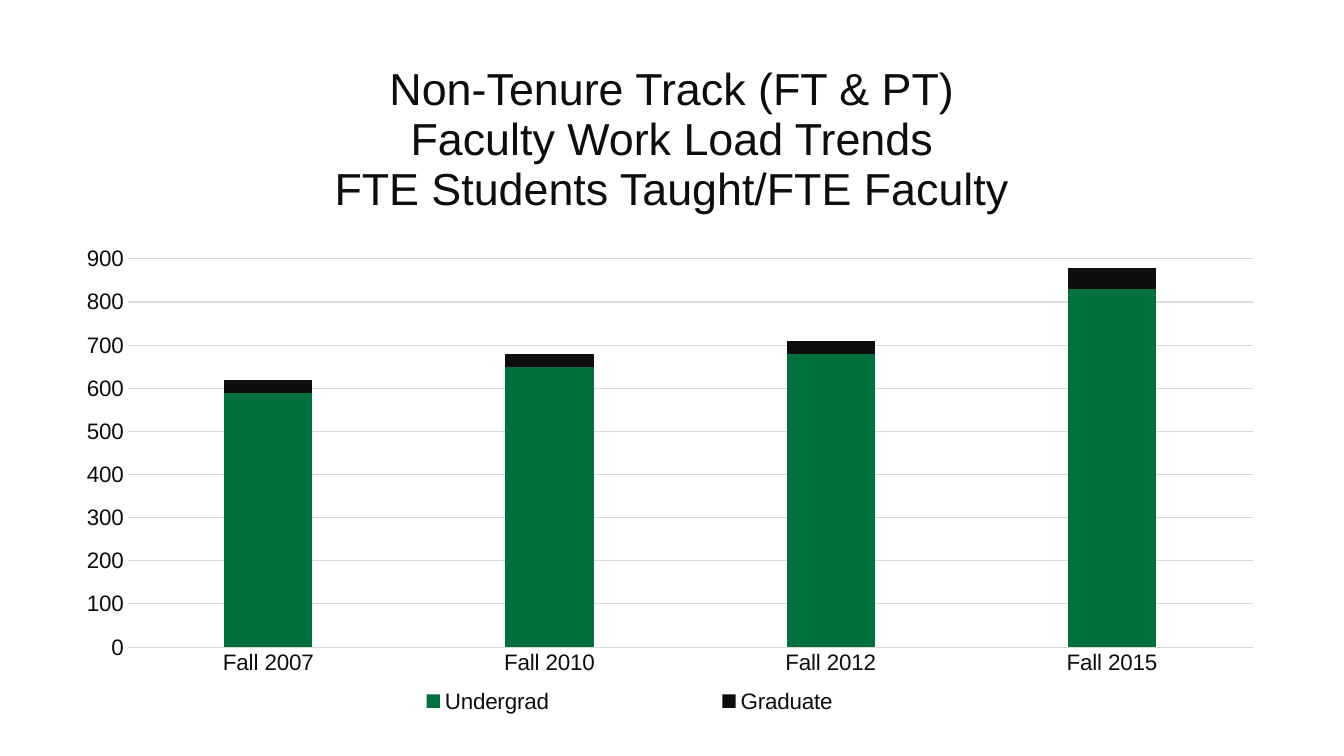
import pptx
import pptx.chart.data
import pptx.dml.color
import pptx.enum.chart
import pptx.enum.text
import pptx.oxml
import pptx.util

GREEN = pptx.dml.color.RGBColor(0x00, 0x70, 0x3C)
INK = pptx.dml.color.RGBColor(0x0D, 0x0D, 0x0D)
GRID = pptx.dml.color.RGBColor(0xD9, 0xD9, 0xD9)

HEADING = ["Non-Tenure Track (FT & PT)", "Faculty Work Load Trends",
           "FTE Students Taught/FTE Faculty"]
TERMS = ["Fall 2007", "Fall 2010", "Fall 2012", "Fall 2015"]
STUDENTS = [("Undergrad", [590, 650, 680, 830], GREEN),
            ("Graduate", [30, 30, 30, 50], INK)]


class WorkloadSlide:
    """Hold the style and the current slide, and place elements by shares of its size."""

    face = "Arial"
    heading_size = pptx.util.Pt(32)
    label_size = pptx.util.Pt(16)
    hairline = pptx.util.Pt(0.75)

    def __init__(self, deck):
        self.width, self.height = deck.slide_width, deck.slide_height
        self.slide = deck.slides.add_slide(deck.slide_layouts[5])

    def area(self, left, top, width, height):
        return (int(left * self.width), int(top * self.height),
                int(width * self.width), int(height * self.height))

    def style(self, font, size):
        font.name, font.size, font.bold = self.face, size, False
        font.color.rgb = INK

    def rule(self, line):
        line.color.rgb = GRID
        line.width = self.hairline

    def arrange(self, element, left, top, width, height, inner=False):
        for previous in element.xpath("c:layout"):
            element.remove(previous)
        target = '<c:layoutTarget val="inner"/>' if inner else ""
        layout = pptx.oxml.parse_xml(
            '<c:layout xmlns:c="http://schemas.openxmlformats.org/drawingml/2006/chart">'
            f'<c:manualLayout>{target}<c:xMode val="edge"/><c:yMode val="edge"/>'
            f'<c:x val="{left}"/><c:y val="{top}"/><c:w val="{width}"/><c:h val="{height}"/>'
            '</c:manualLayout></c:layout>')
        element.insert(0 if inner else 1, layout)

    def heading(self, lines, *shares):
        title = self.slide.shapes.title
        title.left, title.top, title.width, title.height = self.area(*shares)
        frame = title.text_frame
        frame.word_wrap = True
        frame.auto_size = pptx.enum.text.MSO_AUTO_SIZE.NONE
        frame.vertical_anchor = pptx.enum.text.MSO_ANCHOR.MIDDLE
        paragraph = frame.paragraphs[0]
        paragraph.alignment = pptx.enum.text.PP_ALIGN.CENTER
        paragraph.line_spacing = pptx.util.Pt(35.7)
        for number, line in enumerate(lines):
            if number:
                paragraph.add_line_break()
            run = paragraph.add_run()
            run.text = line
            self.style(run.font, self.heading_size)

    def stacked_columns(self, categories, series, *shares):
        data = pptx.chart.data.CategoryChartData()
        data.categories = categories
        for name, values, _ in series:
            data.add_series(name, values)
        chart = self.slide.shapes.add_chart(
            pptx.enum.chart.XL_CHART_TYPE.COLUMN_STACKED, *self.area(*shares), data).chart
        chart.has_title = False
        self.style(chart.font, self.label_size)

        plot = chart.plots[0]
        plot.gap_width, plot.overlap, plot.vary_by_categories = 219, 100, False
        for columns, (_, _, color) in zip(plot.series, series):
            columns.format.fill.solid()
            columns.format.fill.fore_color.rgb = color

        terms, counts = chart.category_axis, chart.value_axis
        for axis in (terms, counts):
            axis.major_tick_mark = pptx.enum.chart.XL_TICK_MARK.NONE
            self.style(axis.tick_labels.font, self.label_size)
        self.rule(terms.format.line)
        counts.format.line.fill.background()
        counts.minimum_scale, counts.maximum_scale, counts.major_unit = 0, 900, 100
        counts.has_major_gridlines = True
        self.rule(counts.major_gridlines.format.line)

        chart.has_legend = True
        legend = chart.legend
        legend.position = pptx.enum.chart.XL_LEGEND_POSITION.BOTTOM
        legend.include_in_layout = False
        self.style(legend.font, self.label_size)
        self.arrange(chart.plots[0]._element.getparent(), 0.05, 0.05, 0.93, 0.79, inner=True)
        self.arrange(legend._element, 0.16, 0.91, 0.61, 0.08)


def main():
    deck = pptx.Presentation()
    deck.slide_width, deck.slide_height = pptx.util.Inches(13.33), pptx.util.Inches(7.5)
    page = WorkloadSlide(deck)
    page.heading(HEADING, 0.1, 0.08, 0.8, 0.21)
    page.stacked_columns(TERMS, STUDENTS, 0.05, 0.31, 0.9, 0.65)
    deck.save("out.pptx")


if __name__ == "__main__":
    main()
